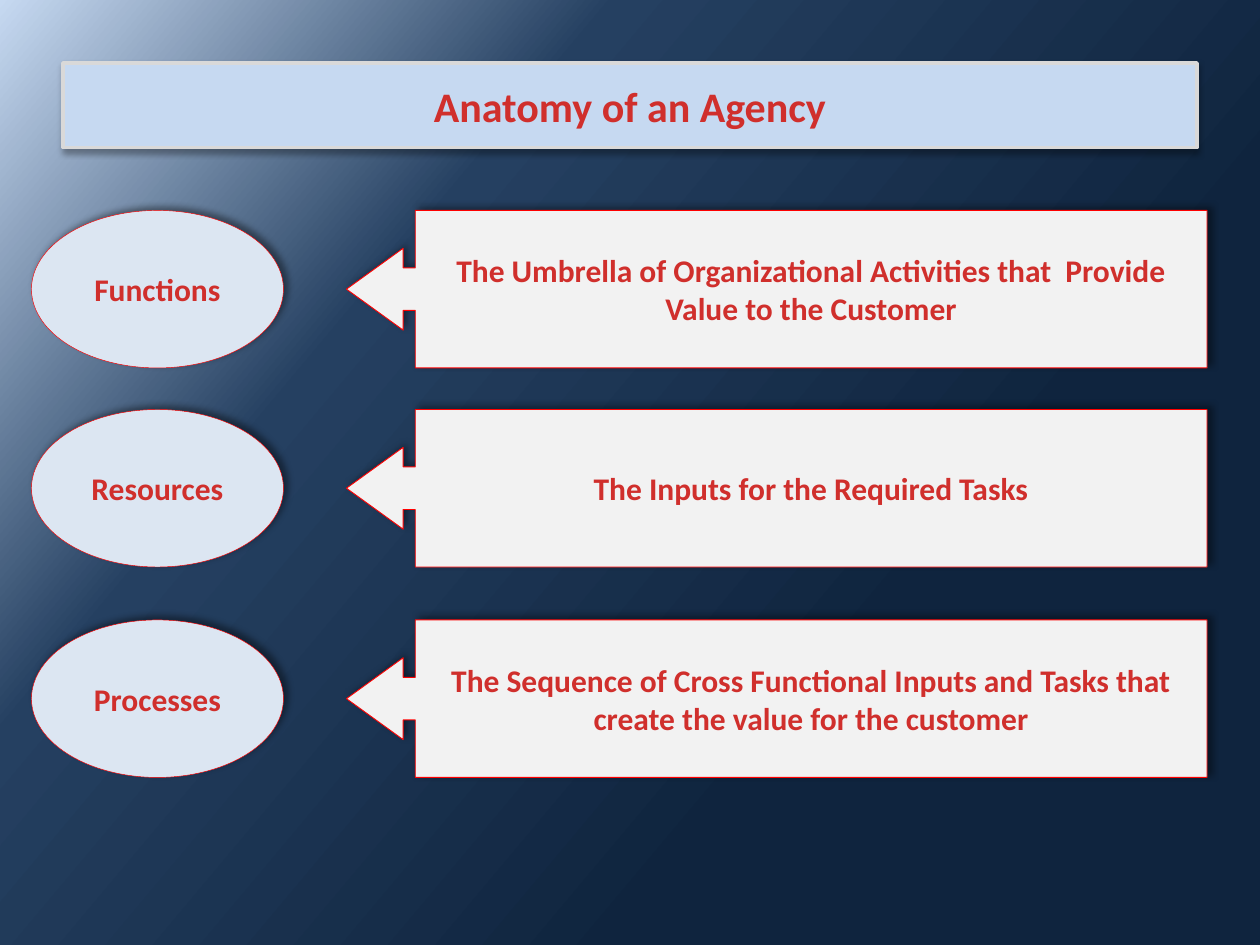
from pptx import Presentation
from pptx.dml.color import RGBColor
from pptx.enum.shapes import MSO_SHAPE as SHAPE
from pptx.enum.text import MSO_ANCHOR as ANCHOR, MSO_AUTO_SIZE as AUTO_SIZE, PP_ALIGN as ALIGN
from pptx.oxml import parse_xml
from pptx.oxml.ns import nsdecls, qn
from pptx.util import Inches, Pt

COLORS = {
    "text": "D02F2C",
    "banner": "C6D9F1",
    "banner_line": "D9D9D9",
    "oval": "DCE6F2",
    "callout": "F2F2F2",
    "line": "FF0000",
    "shadow": "000000",
}
BACKGROUND_STOPS = [(0, "C6D9F1"), (30, "254061"), (69, "0F243E"), (100, "0F243E")]
ROWS = [
    (1.67, "Functions",
     "The Umbrella of Organizational Activities that  Provide Value to the Customer"),
    (3.25, "Resources", "The Inputs for the Required Tasks"),
    (4.92, "Processes",
     "The Sequence of Cross Functional Inputs and Tasks that create the value for the customer"),
]


def rgb(name):
    """Return the named palette colour."""
    return RGBColor.from_string(COLORS[name])


def set_background(s, stops, angle):
    """Fill the slide background with a linear gradient."""
    gs = "".join(f'<a:gs pos="{pos * 1000}"><a:srgbClr val="{color}"/></a:gs>'
                 for pos, color in stops)
    bg = parse_xml(
        f'<p:bg {nsdecls("p", "a")}><p:bgPr><a:gradFill rotWithShape="1">'
        f'<a:gsLst>{gs}</a:gsLst><a:lin ang="{angle * 60000}" scaled="0"/>'
        '</a:gradFill><a:effectLst/></p:bgPr></p:bg>')
    s.element.cSld.insert(0, bg)


def style_shape(sp, fill, line, width):
    """Apply a solid fill and an outline."""
    sp.fill.solid()
    sp.fill.fore_color.rgb = rgb(fill)
    sp.line.color.rgb = rgb(line)
    sp.line.width = Pt(width)


def add_shadow(sp, alpha, blur, distance, angle):
    """Give the shape an outer shadow."""
    sp.shadow.inherit = False
    sp.element.spPr.find(qn("a:effectLst")).append(parse_xml(
        f'<a:outerShdw {nsdecls("a")} blurRad="{Pt(blur)}" dist="{Pt(distance)}" '
        f'dir="{angle * 60000}" rotWithShape="0"><a:srgbClr val="{COLORS["shadow"]}">'
        f'<a:alpha val="{alpha * 1000}"/></a:srgbClr></a:outerShdw>'))


def set_text(sp, text, size):
    """Write bold centred text in the shape."""
    tf = sp.text_frame
    tf.text = text
    tf.word_wrap = True
    tf.auto_size = AUTO_SIZE.NONE
    tf.vertical_anchor = ANCHOR.MIDDLE
    p = tf.paragraphs[0]
    p.alignment = ALIGN.CENTER
    p.font.name = "Calibri"
    p.font.size = Pt(size)
    p.font.bold = True
    p.font.color.rgb = rgb("text")


def place_title(s, text, left, top, width, height):
    """Shape the title placeholder as a trapezoid banner."""
    sp = s.shapes.title
    sp.left, sp.top, sp.width, sp.height = map(Inches, (left, top, width, height))
    sp.element.spPr.append(parse_xml(
        f'<a:prstGeom {nsdecls("a")} prst="trapezoid"><a:avLst/></a:prstGeom>'))
    style_shape(sp, "banner", "banner_line", 2)
    add_shadow(sp, 32, 3.5, 2.2, 90)
    set_text(sp, text, 24)


def add_row(s, term, meaning, left, top, width, height):
    """Add an oval term and the callout that explains it."""
    oval_width, gap = 2, 0.5
    callout_left = left + oval_width + gap
    oval = s.shapes.add_shape(SHAPE.OVAL, Inches(left), Inches(top),
                              Inches(oval_width), Inches(height))
    callout = s.shapes.add_shape(SHAPE.LEFT_ARROW_CALLOUT, Inches(callout_left), Inches(top),
                                 Inches(left + width - callout_left), Inches(height))
    for i, value in enumerate((0.27, 0.26, 0.36, 0.92)):
        callout.adjustments[i] = value
    style_shape(oval, "oval", "line", 0.25)
    style_shape(callout, "callout", "line", 0.5)
    for sp, text in ((oval, term), (callout, meaning)):
        add_shadow(sp, 40, 4, 3, 315)
        set_text(sp, text, 18)


def main():
    """Build and save the slide."""
    prs = Presentation()
    prs.slide_width, prs.slide_height = Inches(10), Inches(7.5)
    s = prs.slides.add_slide(prs.slide_layouts[5])
    set_background(s, BACKGROUND_STOPS, 40)
    place_title(s, "Anatomy of an Agency", 0.5, 0.5, 9, 0.67)
    for top, term, meaning in ROWS:
        add_row(s, term, meaning, 0.25, top, 9.33, 1.25)
    prs.save("out.pptx")


if __name__ == "__main__":
    main()
